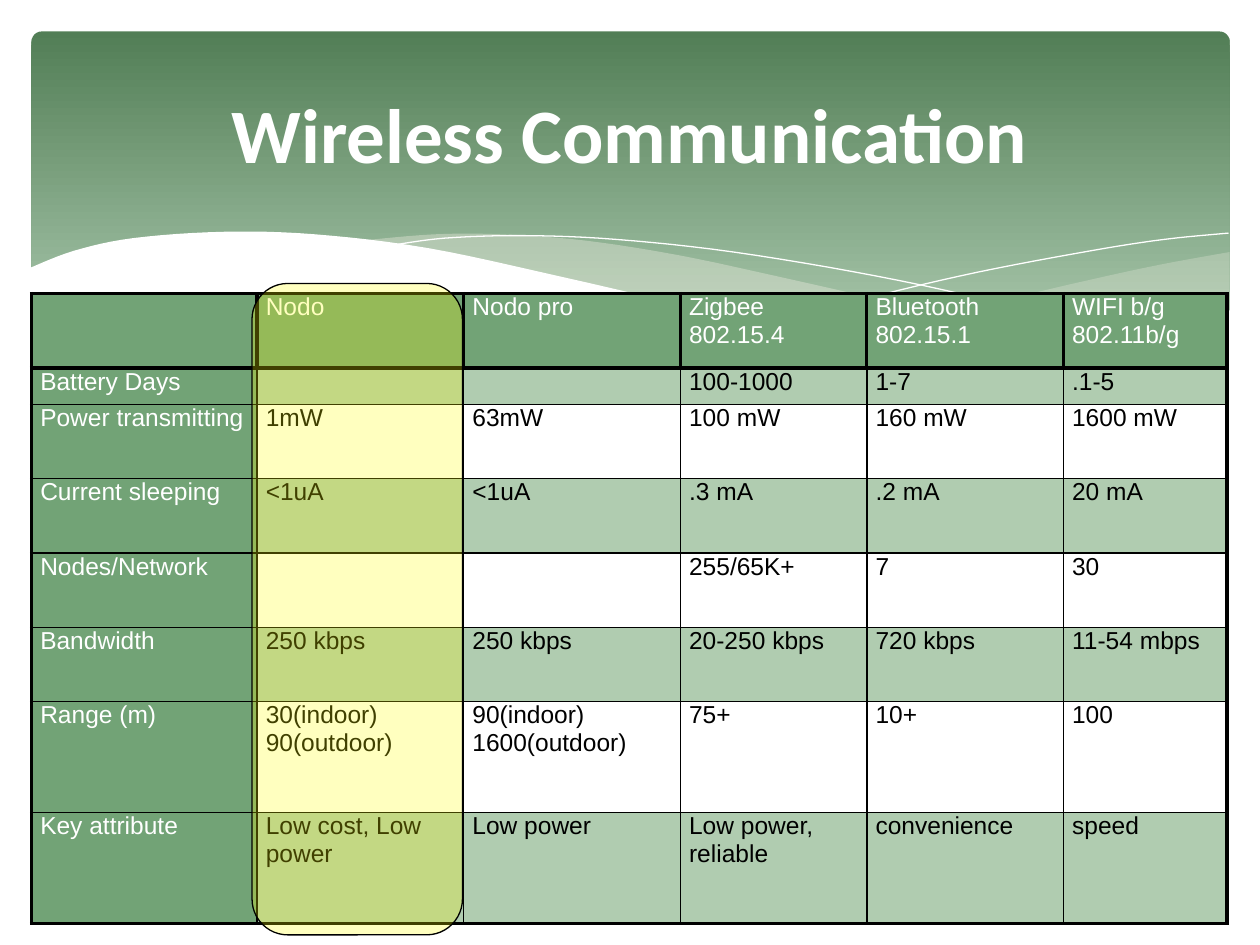
from dataclasses import dataclass

from lxml import etree
from pptx import Presentation
from pptx.dml.color import RGBColor as RGB
from pptx.enum.shapes import MSO_SHAPE as Kind
from pptx.enum.text import MSO_ANCHOR as Anchor, PP_ALIGN as Align
from pptx.oxml.ns import qn
from pptx.util import Inches, Pt


@dataclass(frozen=True)
class Theme:
    white: str = "FFFFFF"
    black: str = "000000"
    dark: str = "527E56"
    pale: str = "AAC8AD"
    head: str = "72A376"
    band: str = "B0CCB0"
    mist: str = "EAEBDE"
    mark: str = "FFFF00"
    title: str = "Calibri"
    body: str = "Arial"
    big: int = 44
    small: int = 14
    thick: float = 2.25
    thin: float = 1


T = Theme()

COLS = [1.79, 1.64, 1.72, 1.48, 1.56, 1.3]
ROWS = [0.59, 0.29, 0.59, 0.59, 0.59, 0.59, 0.88, 0.88]
DATA = [
    ["", "Nodo", "Nodo pro", "Zigbee\n802.15.4", "Bluetooth\n802.15.1",
     "WIFI b/g\n802.11b/g"],
    ["Battery Days", "", "", "100-1000", "1-7", ".1-5"],
    ["Power transmitting", "1mW", "63mW", "100 mW", "160 mW", "1600 mW"],
    ["Current sleeping", "<1uA", "<1uA", ".3 mA", ".2 mA", "20 mA"],
    ["Nodes/Network", "", "", "255/65K+", "7", "30"],
    ["Bandwidth", "250 kbps", "250 kbps", "20-250 kbps", "720 kbps",
     "11-54 mbps"],
    ["Range (m)", "30(indoor)\n90(outdoor)", "90(indoor)\n1600(outdoor)",
     "75+", "10+", "100"],
    ["Key attribute", "Low cost, Low power", "Low power",
     "Low power, reliable", "convenience", "speed"],
]

# Knots of the wave edges, in inches
SWELL = [
    [(9.76, 2), (9.21, 2.1), (8.61, 2.23), (7.79, 2.42), (7.06, 2.57),
     (6.61, 2.65)],
    [(6.61, 2.65), (7.05, 2.71), (7.57, 2.76), (8.03, 2.78), (8.54, 2.76),
     (8.97, 2.7), (9.35, 2.62), (9.76, 2.47)],
]
CREST = [
    [(8.93, 2.73), (8.37, 2.65), (7.41, 2.47), (6.29, 2.22), (5.41, 2.03),
     (4.65, 1.91), (3.99, 1.86), (3.44, 1.86), (2.86, 1.91)],
    [(2.86, 1.91), (3.62, 2.03), (4.49, 2.22), (5.66, 2.48), (6.5, 2.64),
     (7.22, 2.74), (7.85, 2.78), (8.38, 2.78), (8.93, 2.73)],
]
FALL = [[(3.09, 1.95), (3.53, 1.89), (4.16, 1.87), (4.89, 1.9), (5.82, 2),
         (6.95, 2.19), (7.95, 2.41), (9.07, 2.72)]]
RISE = [[(6.13, 2.57), (6.95, 2.35), (7.76, 2.16), (8.66, 1.99),
         (9.24, 1.9), (9.75, 1.85)]]
FLOOR = [
    [(9.77, 2.46), (9.2, 2.65), (8.63, 2.74), (8.09, 2.77), (7.44, 2.74),
     (6.68, 2.65), (5.79, 2.5), (4.47, 2.2), (3.4, 1.97), (2.5, 1.86),
     (1.77, 1.84), (1.06, 1.89), (0.59, 1.99), (0.23, 2.13)],
    [(0.23, 3.29), (9.77, 3.29)],
]


def paint(fill, tone, alpha=100):
    fill.solid()
    fill.fore_color.rgb = RGB.from_string(tone)
    if alpha < 100:
        clr = fill._xPr.find(qn("a:solidFill"))[0]
        etree.SubElement(clr, qn("a:alpha")).set("val", str(alpha * 1000))


def smooth(knots, steps=6):
    """Catmull-Rom points through the knots."""
    pts = [knots[0], *knots, knots[-1]]
    out = [knots[0]]
    if len(knots) < 3:
        return knots
    for a, b, c, d in zip(pts, pts[1:], pts[2:], pts[3:]):
        for i in range(1, steps + 1):
            t = i / steps
            out.append(tuple(
                (2 * q + (r - p) * t + (2 * p - 5 * q + 4 * r - s) * t**2
                 + (3 * q - p - 3 * r + s) * t**3) / 2
                for p, q, r, s in zip(a, b, c, d)))
    return out


def add_wave(shapes, edges, tone, alpha=100, filled=True):
    pts = [(Inches(x), Inches(y)) for e in edges for x, y in smooth(e)]
    pen = shapes.build_freeform(*pts[0], scale=1)
    pen.add_line_segments(pts[1:], close=filled)
    wave = pen.convert_to_shape()
    wave.shadow.inherit = False
    if filled:
        paint(wave.fill, tone, alpha)
        wave.line.fill.background()
    else:
        wave.fill.background()
        paint(wave.line.fill, tone)
        wave.line.width = Pt(0)


def add_round(shapes, x, y, w, h, adj):
    box = shapes.add_shape(Kind.ROUNDED_RECTANGLE, Inches(x), Inches(y),
                           Inches(w), Inches(h))
    box.adjustments[0] = adj
    box.shadow.inherit = False
    return box


def add_run(para, text, face, size, tone, bold=False):
    run = para.add_run()
    run.text = text
    font = run.font
    font.name, font.size, font.bold = face, Pt(size), bold
    font.color.rgb = RGB.from_string(tone)


def add_banner(shapes):
    panel = add_round(shapes, 0.25, 0.25, 9.51, 2.7, 0.03)
    panel.line.fill.background()
    panel.fill.gradient()
    panel.fill.gradient_angle = 270
    for stop, tone, pos in zip(panel.fill.gradient_stops,
                               (T.dark, T.pale), (0, 0.9)):
        stop.color.rgb = RGB.from_string(tone)
        stop.position = pos
    add_wave(shapes, SWELL, T.mist, 29)
    add_wave(shapes, CREST, T.mist, 40)
    add_wave(shapes, FALL, T.white, filled=False)
    add_wave(shapes, RISE, T.white, filled=False)
    add_wave(shapes, FLOOR, T.white)


def add_title(shapes, text):
    frame = shapes.add_textbox(Inches(0.5), Inches(0.37), Inches(9),
                               Inches(1.37)).text_frame
    frame.word_wrap = True
    frame.vertical_anchor = Anchor.MIDDLE
    para = frame.paragraphs[0]
    para.alignment = Align.CENTER
    add_run(para, text, T.title, T.big, T.white, True)


def set_edges(cell, widths):
    """Border widths in the order left, right, top, bottom."""
    props = cell._tc.get_or_add_tcPr()
    for i, (side, width) in enumerate(zip("LRTB", widths)):
        line = etree.Element(qn(f"a:ln{side}"), w=str(Pt(width)))
        fill = etree.SubElement(line, qn("a:solidFill"))
        etree.SubElement(fill, qn("a:srgbClr")).set("val", T.black)
        props.insert(i, line)


def fill_cell(cell, text, r, c):
    head = r == 0 or c == 0
    cell.margin_left = cell.margin_right = Inches(0.07)
    cell.margin_top = cell.margin_bottom = 0
    if head or r % 2:
        paint(cell.fill, T.head if head else T.band)
    else:
        cell.fill.background()
    # Header row and outer frame are thick
    heavy = (r == 0 or c == 0, r == 0 or c == len(COLS) - 1,
             r < 2, r in (0, len(ROWS) - 1))
    if r and c == 0:
        heavy = (True, False, *heavy[2:])
    set_edges(cell, [T.thick if h else T.thin for h in heavy])
    frame = cell.text_frame
    for i, part in enumerate(text.split("\n")):
        para = frame.add_paragraph() if i else frame.paragraphs[0]
        para.alignment = Align.LEFT if "," in part else Align.JUSTIFY
        if part:
            add_run(para, part, T.body, T.small, T.white if head else T.black)
        else:
            para._p.get_or_add_endParaRPr().set("sz", str(T.small * 100))


def add_grid(shapes):
    grid = shapes.add_table(len(ROWS), len(COLS), Inches(0.25), Inches(2.33),
                            Inches(sum(COLS)), Inches(sum(ROWS))).table
    grid.first_row = grid.horz_banding = False
    for col, width in zip(grid.columns, COLS):
        col.width = Inches(width)
    for r, (row, height) in enumerate(zip(grid.rows, ROWS)):
        row.height = Inches(height)
        for c, cell in enumerate(row.cells):
            fill_cell(cell, DATA[r][c], r, c)


def add_marker(shapes):
    mark = add_round(shapes, 0.25, 4, 5.17, 1.67, 0.17)
    mark.rotation = 90
    paint(mark.fill, T.mark, 25)
    paint(mark.line.fill, T.black)
    mark.line.width = Pt(0.75)


def main():
    deck = Presentation()
    deck.slide_width, deck.slide_height = Inches(10), Inches(7.5)
    shapes = deck.slides.add_slide(deck.slide_layouts[6]).shapes
    add_banner(shapes)
    add_title(shapes, "Wireless Communication")
    add_grid(shapes)
    # Highlight of the chosen module
    add_marker(shapes)
    deck.save("out.pptx")


if __name__ == "__main__":
    main()
